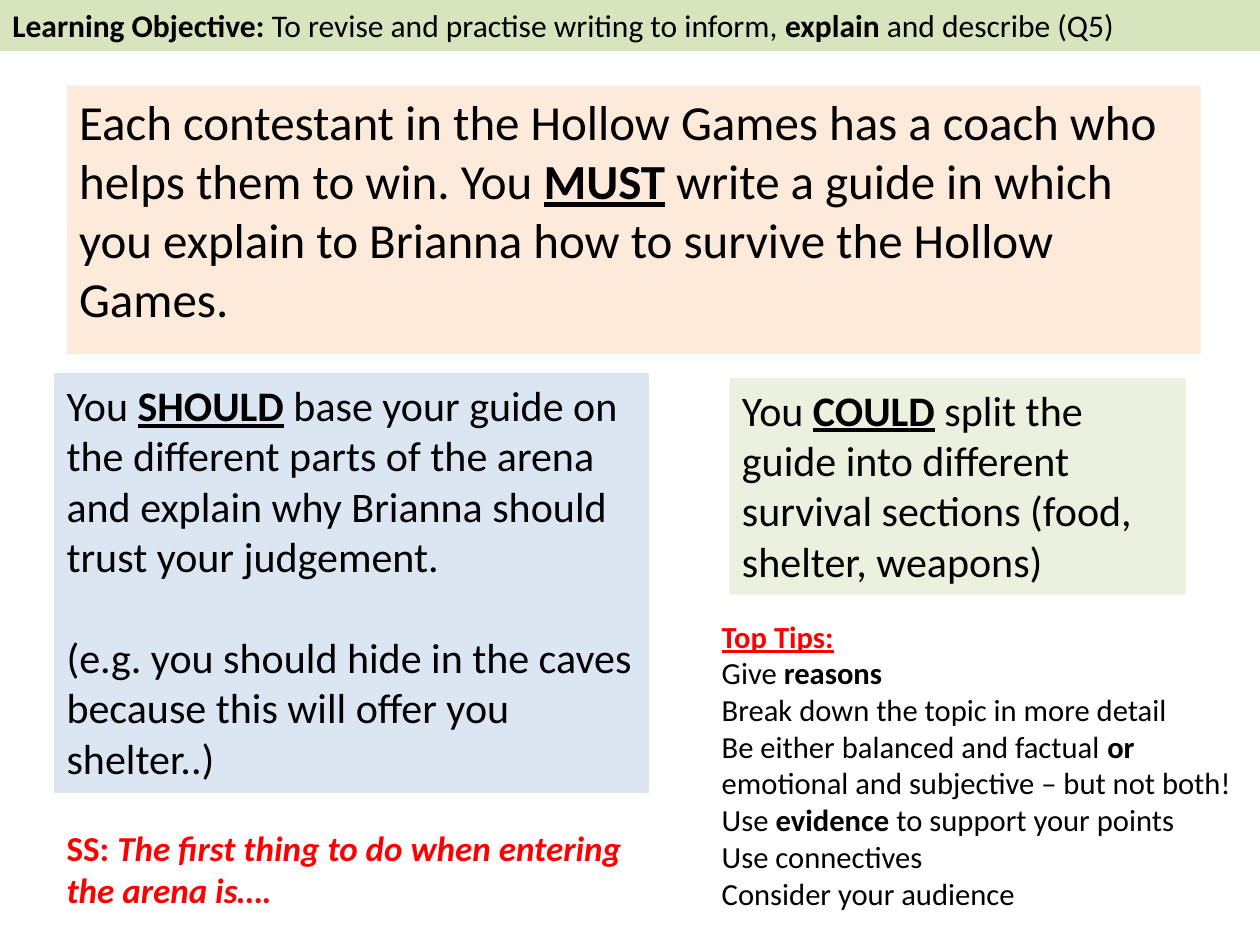
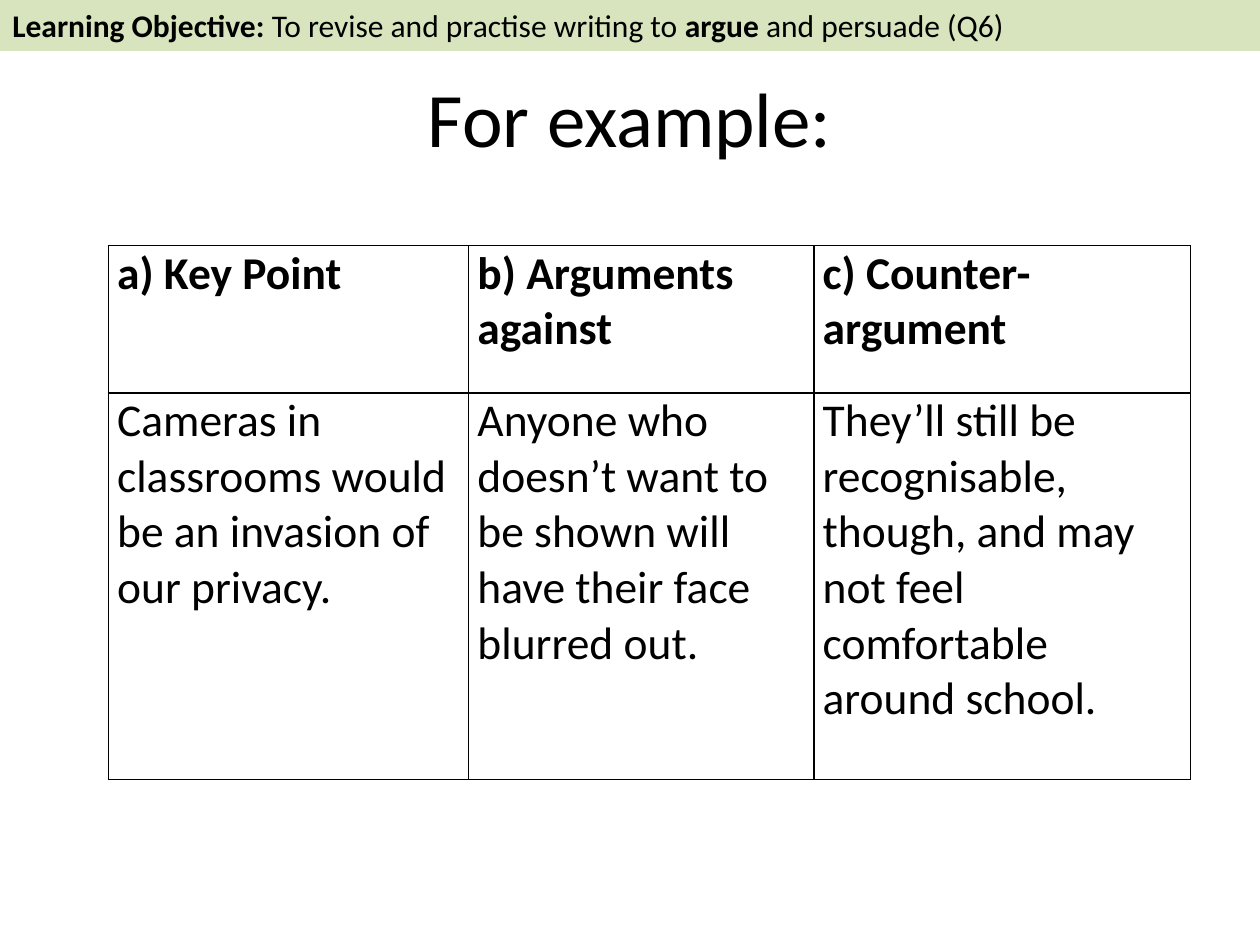
"""Build two lesson slides: a survival-guide writing task and an argument table."""
from dataclasses import dataclass

from lxml import etree
from pptx import Presentation
from pptx import util as u
from pptx.dml import color
from pptx.enum import shapes, text
from pptx.oxml import ns


@dataclass(frozen=True)
class Theme:
    font: str = "Calibri"
    ink: str = "000000"
    alert: str = "FF0000"
    band: str = "D7E4BD"
    must: str = "FDEADA"
    should: str = "DCE6F2"
    could: str = "EBF1DE"
    title_size: float = 44
    must_size: float = 28
    table_size: float = 26
    task_size: float = 24
    starter_size: float = 20
    band_size: float = 18
    tips_size: float = 17.5


theme = Theme()
presentation = Presentation()
presentation.slide_width = u.Inches(10)
presentation.slide_height = u.Inches(7.5)
COLUMN = presentation.slide_width / 100
ROW = presentation.slide_height / 100


def write(frame, *lines, size, ink=theme.ink, bold=False, strong=("bold",),
          align=text.PP_ALIGN.LEFT, gap=0):
    """Append lines to a frame; parts between asterisks take the strong styles."""
    for number, line in enumerate(lines):
        paragraph = frame.add_paragraph() if frame.text else frame.paragraphs[0]
        paragraph.alignment = align
        paragraph.space_before = u.Pt(gap if number else 0)
        for index, part in enumerate(line.split("*")):
            if not part:
                continue
            run = paragraph.add_run()
            run.text = part
            run.font.name = theme.font
            run.font.size = u.Pt(size)
            run.font.color.rgb = color.RGBColor.from_string(ink)
            run.font.bold = bold
            if index % 2:
                for style in strong:
                    setattr(run.font, style, True)


def add_panel(slide, left, top, width, height, fill=None):
    """Add a panel placed in grid columns and rows and return its text frame."""
    box = (round(left * COLUMN), round(top * ROW), round(width * COLUMN), round(height * ROW))
    if fill:
        shape = slide.shapes.add_shape(shapes.MSO_SHAPE.RECTANGLE, *box)
        shape.shadow.inherit = False
        shape.fill.solid()
        shape.fill.fore_color.rgb = color.RGBColor.from_string(fill)
        shape.line.fill.background()
    else:
        shape = slide.shapes.add_textbox(*box)
    shape.text_frame.word_wrap = True
    shape.text_frame.vertical_anchor = text.MSO_ANCHOR.TOP
    return shape.text_frame


blank = presentation.slide_layouts[6]
task_slide, example_slide = [presentation.slides.add_slide(blank) for _ in range(2)]

tasks = [
    ((5.3, 9.07, 90, 28.4), theme.must, theme.must_size,
     ["Each contestant in the Hollow Games has a coach who helps them to win. You *MUST* write a guide "
      "in which you explain to Brianna how to survive the Hollow Games."]),
    ((4.3, 39.5, 47.2, 44.4), theme.should, theme.task_size,
     ["You *SHOULD* base your guide on the different parts of the arena and explain why Brianna "
      "should trust your judgement.",
      "(e.g. you should hide in the caves because this will offer you shelter..)"]),
    ((57.9, 40, 36.2, 22.9), theme.could, theme.task_size,
     ["You *COULD* split the guide into different survival sections (food, shelter, weapons)"]),
]
for box, fill, size, lines in tasks:
    write(add_panel(task_slide, *box, fill=fill), *lines, size=size,
          strong=("bold", "underline"), gap=size * 1.2)

tips = add_panel(task_slide, 56.3, 64.7, 43.7, 36.8)
write(tips, "*Top Tips:*", size=theme.tips_size, ink=theme.alert, strong=("bold", "underline"))
write(tips,
      "Give *reasons*",
      "Break down the topic in more detail",
      "Be either balanced and factual *or* emotional and subjective – but not both!",
      "Use *evidence* to support your points",
      "Use connectives",
      "Consider your audience",
      size=theme.tips_size)

starter = add_panel(task_slide, 4.3, 86.8, 47.2, 10.3)
write(starter, "SS: *The first thing to do when entering the arena is….*",
      size=theme.starter_size, ink=theme.alert, bold=True, strong=("italic",))

title = add_panel(example_slide, 5, 4, 90, 16.7)
title.vertical_anchor = text.MSO_ANCHOR.MIDDLE
write(title, "For example:", size=theme.title_size, align=text.PP_ALIGN.CENTER)

arguments = [
    ["a) Key Point", "b) Arguments against", "c) Counter-argument"],
    ["Cameras in classrooms would be an invasion of our privacy.",
     "Anyone who doesn’t want to be shown will have their face blurred out.",
     "They’ll still be recognisable, though, and may not feel comfortable around school."],
]
column_shares = [28.6, 27.4, 29.9]
row_shares = [15.6, 40.9]
table = example_slide.shapes.add_table(
    len(row_shares), len(column_shares), round(8.6 * COLUMN), round(26 * ROW),
    round(sum(column_shares) * COLUMN), round(sum(row_shares) * ROW)).table
table.first_row = table.horz_banding = False
for column, share in zip(table.columns, column_shares):
    column.width = round(share * COLUMN)
for row, share, entries in zip(table.rows, row_shares, arguments):
    row.height = round(share * ROW)
    for cell, entry in zip(row.cells, entries):
        cell.margin_left = cell.margin_right = round(0.7 * COLUMN)
        cell.margin_top = cell.margin_bottom = 0
        write(cell.text_frame, entry, size=theme.table_size, bold=entries is arguments[0])
        properties = cell._tc.get_or_add_tcPr()
        for side in ("a:lnL", "a:lnR", "a:lnT", "a:lnB"):
            border = etree.SubElement(properties, ns.qn(side), w=str(u.Pt(1)))
            solid = etree.SubElement(border, ns.qn("a:solidFill"))
            etree.SubElement(solid, ns.qn("a:srgbClr"), val=theme.ink)
        cell.fill.background()

objectives = [
    (task_slide, "inform, *explain* and describe (Q5)"),
    (example_slide, "*argue* and persuade (Q6)"),
]
for slide, purpose in objectives:
    band = add_panel(slide, 0, 0, 100, 5.4, fill=theme.band)
    write(band, f"*Learning Objective: *To revise and practise writing to {purpose}", size=theme.band_size)

presentation.save("out.pptx")
